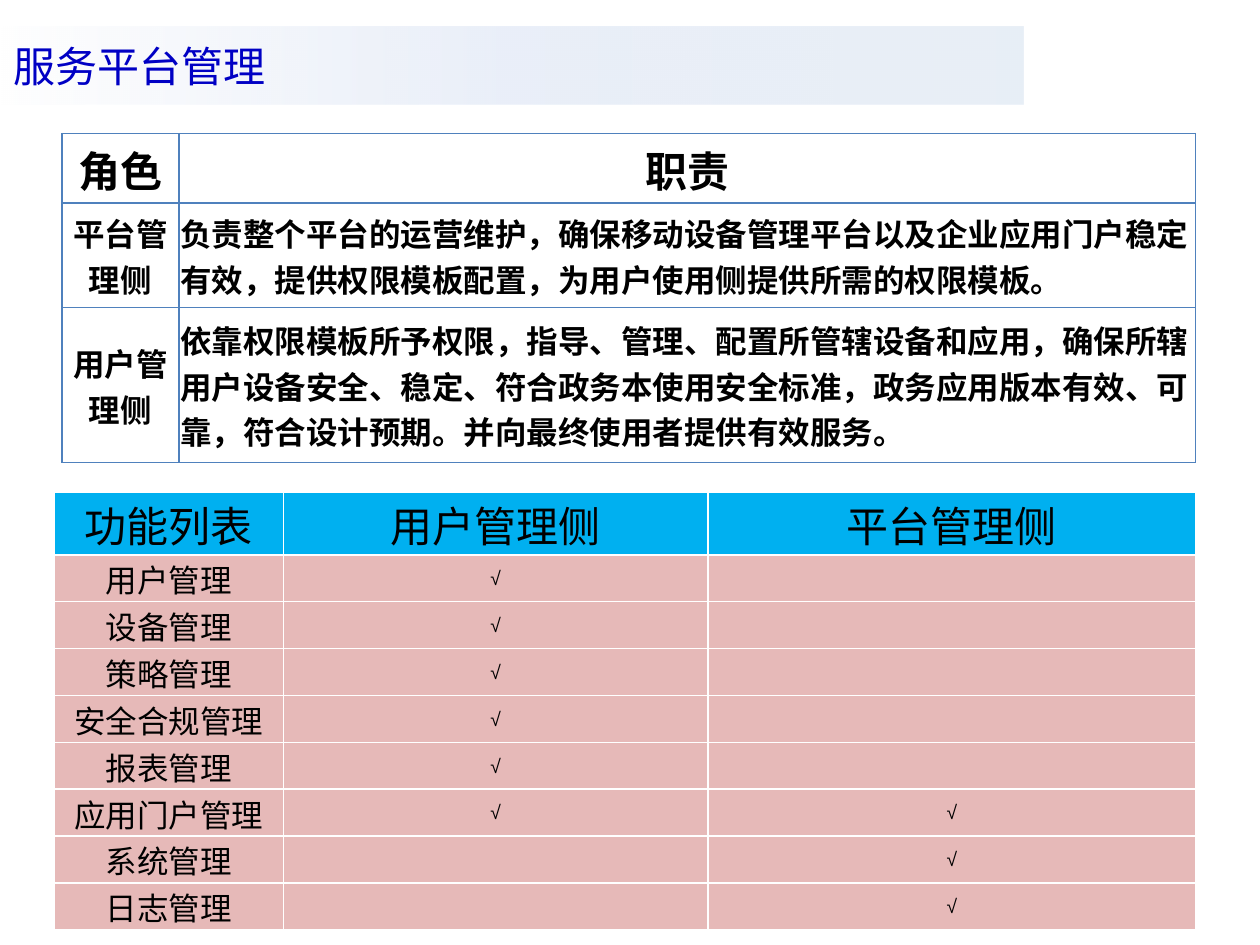
import pptx
import pptx.util
import pptx.dml.color
import pptx.enum.text
import pptx.oxml
import pptx.oxml.ns
from pptx.util import Inches

COLORS = {
    "title": "0000C4", "text": "000000", "rule": "4F81BD", "grid": "FFFFFF",
    "header": "00B0F0", "body": "E6B9B8",
}
# Banner gradient: position %, colour, opacity %
BANNER_STOPS = [(0, "FFFFFF", 40), (50, "C2D1ED", 34), (100, "B9CDE5", 32)]
CENTER = pptx.enum.text.PP_ALIGN.CENTER
LEFT = pptx.enum.text.PP_ALIGN.LEFT
MIDDLE = pptx.enum.text.MSO_ANCHOR.MIDDLE

ROLES = [
    ("角色", "职责"),
    ("平台管理侧", "负责整个平台的运营维护，确保移动设备管理平台以及企业应用门户稳定有效，"
                   "提供权限模板配置，为用户使用侧提供所需的权限模板。"),
    ("用户管理侧", "依靠权限模板所予权限，指导、管理、配置所管辖设备和应用，确保所辖用户设备安全、"
                   "稳定、符合政务本使用安全标准，政务应用版本有效、可靠，符合设计预期。"
                   "并向最终使用者提供有效服务。"),
]
FEATURES = [
    ("功能列表", "用户管理侧", "平台管理侧"),
    ("用户管理", "√", ""),
    ("设备管理", "√", ""),
    ("策略管理", "√", ""),
    ("安全合规管理", "√", ""),
    ("报表管理", "√", ""),
    ("应用门户管理", "√", "√"),
    ("系统管理", "", "√"),
    ("日志管理", "", "√"),
]


def rgb(name):
    return pptx.dml.color.RGBColor.from_string(COLORS[name])


def set_font(p, size, color, name="Arial", bold=False):
    p.font.size = pptx.util.Pt(size)
    p.font.name = name
    p.font.bold = bold
    p.font.color.rgb = rgb(color)


def set_borders(cell, color):
    ns = pptx.oxml.ns.nsdecls("a")
    tc_pr = cell._tc.get_or_add_tcPr()
    for i, side in enumerate(("lnL", "lnR", "lnT", "lnB")):
        tc_pr.insert(i, pptx.oxml.parse_xml(
            f'<a:{side} {ns} w="12700"><a:solidFill>'
            f'<a:srgbClr val="{COLORS[color]}"/></a:solidFill></a:{side}>'))


def add_title(s, text, left, top, width, height):
    sp = s.shapes.title
    sp.left, sp.top, sp.width, sp.height = left, top, width, height
    stops = "".join(
        f'<a:gs pos="{pos * 1000}"><a:srgbClr val="{color}">'
        f'<a:alpha val="{alpha * 1000}"/></a:srgbClr></a:gs>'
        for pos, color, alpha in BANNER_STOPS)
    sp.fill.gradient()
    grad = sp._element.spPr.find(pptx.oxml.ns.qn("a:gradFill"))
    grad.getparent().replace(grad, pptx.oxml.parse_xml(
        f'<a:gradFill {pptx.oxml.ns.nsdecls("a")} rotWithShape="1">'
        f'<a:gsLst>{stops}</a:gsLst><a:lin ang="0" scaled="1"/></a:gradFill>'))
    tf = sp.text_frame
    tf.text = text
    tf.vertical_anchor = MIDDLE
    p = tf.paragraphs[0]
    p.alignment = LEFT
    set_font(p, 24, "title", "Noto Sans CJK SC")


def add_grid(s, rows, left, top, col_widths, row_heights, border, style):
    """Add a table; style(row, col) gives size, bold, alignment and fill."""
    table = s.shapes.add_table(
        len(rows), len(col_widths), left, top,
        Inches(sum(col_widths)), Inches(sum(row_heights))).table
    table.first_row = table.horz_banding = False
    for col, width in zip(table.columns, col_widths):
        col.width = Inches(width)
    for row, height in zip(table.rows, row_heights):
        row.height = Inches(height)
    for r, texts in enumerate(rows):
        for c, text in enumerate(texts):
            cell = table.cell(r, c)
            size, bold, align, fill = style(r, c)
            cell.margin_left = cell.margin_right = cell.margin_top = Inches(0.01)
            cell.margin_bottom = 0
            cell.vertical_anchor = MIDDLE
            cell.text = text
            p = cell.text_frame.paragraphs[0]
            p.alignment = align
            set_font(p, size, "text", bold=bold)
            if fill:
                cell.fill.solid()
                cell.fill.fore_color.rgb = rgb(fill)
            else:
                cell.fill.background()
            set_borders(cell, border)


def add_roles(s, left, top):
    def style(r, c):
        return 24 if r == 0 else 18, True, LEFT if r and c else CENTER, None
    add_grid(s, ROLES, left, top, [0.93, 8.07], [0.55, 0.83, 1.23], "rule", style)


def add_features(s, left, top):
    def style(r, c):
        if r == 0:
            return 24, False, CENTER, "header"
        return 11 if c else 18, False, CENTER, "body"
    heights = [0.49] + [0.37] * (len(FEATURES) - 1)
    add_grid(s, FEATURES, left, top, [1.82, 3.37, 3.87], heights, "grid", style)


def main():
    prs = pptx.Presentation()
    prs.slide_width, prs.slide_height = Inches(10), Inches(7.5)
    s = prs.slides.add_slide(prs.slide_layouts[5])
    # Title banner
    add_title(s, "服务平台管理", Inches(0.01), Inches(0.21), Inches(8.11), Inches(0.62))
    # Feature matrix
    add_features(s, Inches(0.43), Inches(3.91))
    # Roles and duties
    add_roles(s, Inches(0.49), Inches(1.06))
    prs.save("out.pptx")


if __name__ == "__main__":
    main()
